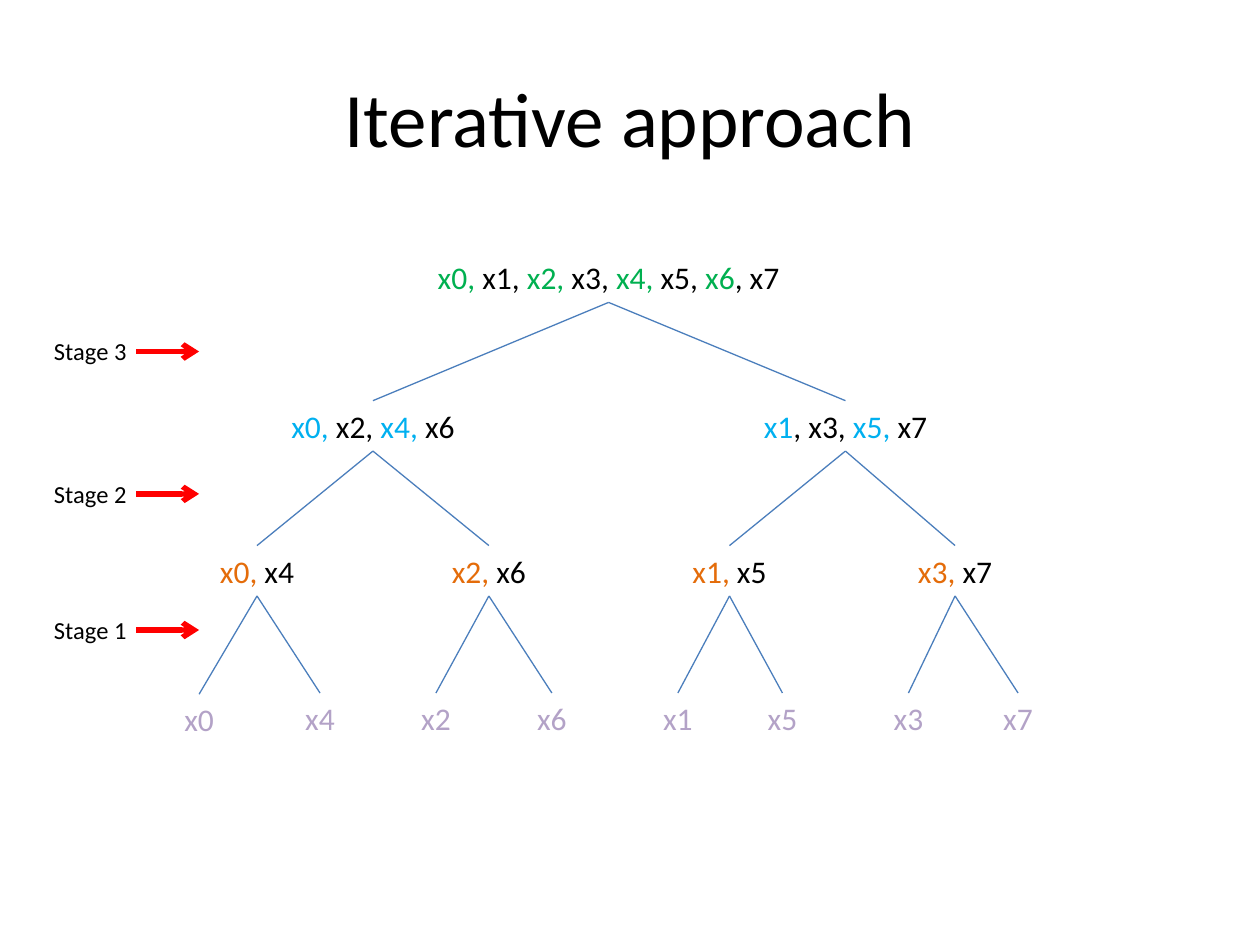
from dataclasses import dataclass

from lxml.etree import SubElement
from pptx import Presentation
from pptx.dml.color import RGBColor
from pptx.enum.shapes import MSO_CONNECTOR as Connector
from pptx.enum.text import MSO_ANCHOR as Anchor, MSO_AUTO_SIZE as AutoSize, PP_ALIGN as Align
from pptx.oxml.ns import qn
from pptx.util import Inches, Pt

COLORS = {
    "text": "000000",
    "branch": "4B7EBC",
    "arrow": "FF0000",
    "root": "00B050",
    "half": "00B0F0",
    "pair": "E46C0A",
    "leaf": "B3A2C7",
}
NODE_HEIGHT = 0.4


@dataclass(frozen=True)
class Node:
    """A tree node whose runs alternate between its level colour and black."""
    center: float
    top: float
    width: float
    level: str
    runs: tuple[str, ...]

    @property
    def bottom(self) -> float:
        return self.top + NODE_HEIGHT


@dataclass(frozen=True)
class Stage:
    label: str
    top: float


# Level order: the children of node i are nodes 2i + 1 and 2i + 2.
TREE = [
    Node(4.83, 2, 3, "root", ("x0, ", "x1, ", "x2, ", "x3, ", "x4,", " x5, ", "x6", ", x7")),
    Node(2.96, 3.18, 1.58, "half", ("x0, ", "x2, ", "x4,", " x6")),
    Node(6.71, 3.18, 1.58, "half", ("x1", ", x3, ", "x5,", " x7")),
    Node(2.04, 4.33, 0.92, "pair", ("x0,", " x4")),
    Node(3.88, 4.33, 0.92, "pair", ("x2,", " x6")),
    Node(5.79, 4.33, 0.92, "pair", ("x1,", " x5")),
    Node(7.58, 4.33, 0.83, "pair", ("x3,", " x7")),
    Node(1.58, 5.51, 0.58, "leaf", ("x0",)),
    Node(2.54, 5.5, 0.58, "leaf", ("x4",)),
    Node(3.46, 5.5, 0.58, "leaf", ("x2",)),
    Node(4.38, 5.5, 0.58, "leaf", ("x6",)),
    Node(5.38, 5.5, 0.58, "leaf", ("x1",)),
    Node(6.21, 5.5, 0.58, "leaf", ("x5",)),
    Node(7.21, 5.5, 0.58, "leaf", ("x3",)),
    Node(8.08, 5.5, 0.5, "leaf", ("x7",)),
]
STAGES = [Stage("Stage 3", 2.62), Stage("Stage 2", 3.75), Stage("Stage 1", 4.83)]


def add_run(paragraph, text: str, size: float, color: str) -> None:
    run = paragraph.add_run()
    run.text = text
    for attribute, value in {"name": "Calibri", "size": Pt(size)}.items():
        setattr(run.font, attribute, value)
    run.font.color.rgb = RGBColor.from_string(COLORS[color])


def add_label(slide, left: float, top: float, width: float, height: float, align: Align):
    """Add an empty text box and return its paragraph."""
    box = slide.shapes.add_textbox(Inches(left), Inches(top), Inches(width), Inches(height))
    frame_format = {"word_wrap": True, "auto_size": AutoSize.SHAPE_TO_FIT_TEXT}
    for attribute, value in frame_format.items():
        setattr(box.text_frame, attribute, value)
    paragraph = box.text_frame.paragraphs[0]
    paragraph.alignment = align
    return paragraph


def add_line(slide, start: tuple[float, float], end: tuple[float, float],
             color: str, weight: float, arrow: bool = False) -> None:
    points = [Inches(length) for length in (*start, *end)]
    connector = slide.shapes.add_connector(Connector.STRAIGHT, *points)
    connector.line.color.rgb = RGBColor.from_string(COLORS[color])
    connector.line.width = Pt(weight)
    if arrow:
        SubElement(connector.line._get_or_add_ln(), qn("a:tailEnd"), type="arrow")
    SubElement(connector._element.spPr, qn("a:effectLst"))


def add_title(slide, text: str) -> None:
    title = slide.shapes.title
    place = {"left": 0.5, "top": 0.3, "width": 9, "height": 1.25}
    for attribute, value in place.items():
        setattr(title, attribute, Inches(value))
    title.text_frame.vertical_anchor = Anchor.MIDDLE
    paragraph = title.text_frame.paragraphs[0]
    paragraph.alignment = Align.CENTER
    add_run(paragraph, text, 44, "text")


def add_node(slide, node: Node) -> None:
    left = node.center - node.width / 2
    paragraph = add_label(slide, left, node.top, node.width, NODE_HEIGHT, Align.CENTER)
    for position, text in enumerate(node.runs):
        add_run(paragraph, text, 18, "text" if position % 2 else node.level)


def add_branches(slide, tree: list[Node]) -> None:
    for index, child in enumerate(tree[1:]):
        parent = tree[index // 2]
        add_line(slide, (parent.center, parent.bottom), (child.center, child.top), "branch", 0.75)


def add_stage(slide, stage: Stage) -> None:
    arrow_y = stage.top + 0.17
    add_line(slide, (1.08, arrow_y), (1.58, arrow_y), "arrow", 3, arrow=True)
    add_run(add_label(slide, 0.33, stage.top, 1.42, 0.34, Align.LEFT), stage.label, 14, "text")


def main() -> None:
    deck = Presentation()
    deck.slide_width, deck.slide_height = Inches(10), Inches(7.5)
    slide = deck.slides.add_slide(deck.slide_layouts[5])
    add_title(slide, "Iterative approach")
    for node in TREE:
        add_node(slide, node)
    add_branches(slide, TREE)
    for stage in STAGES:
        add_stage(slide, stage)
    deck.save("out.pptx")


if __name__ == "__main__":
    main()
